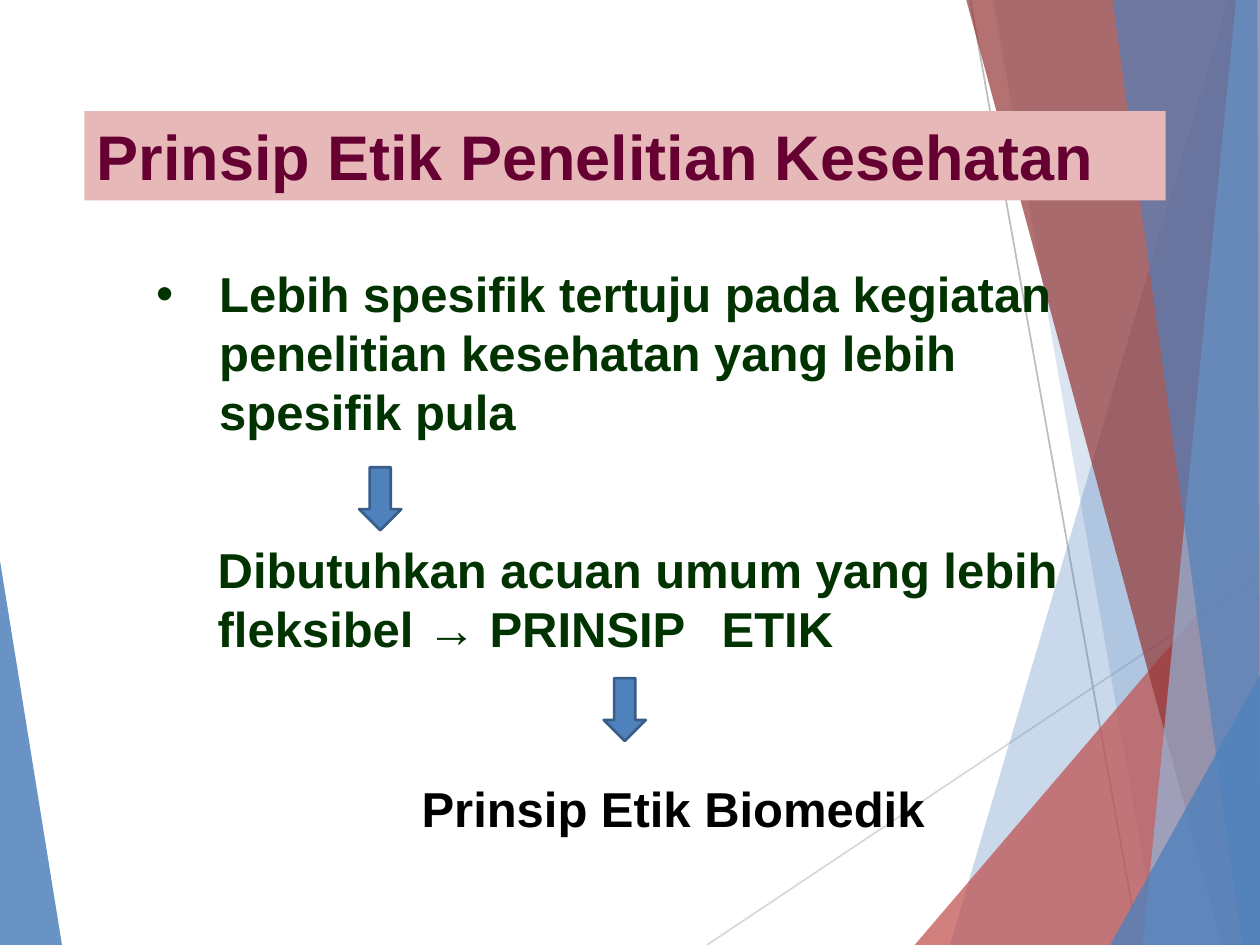
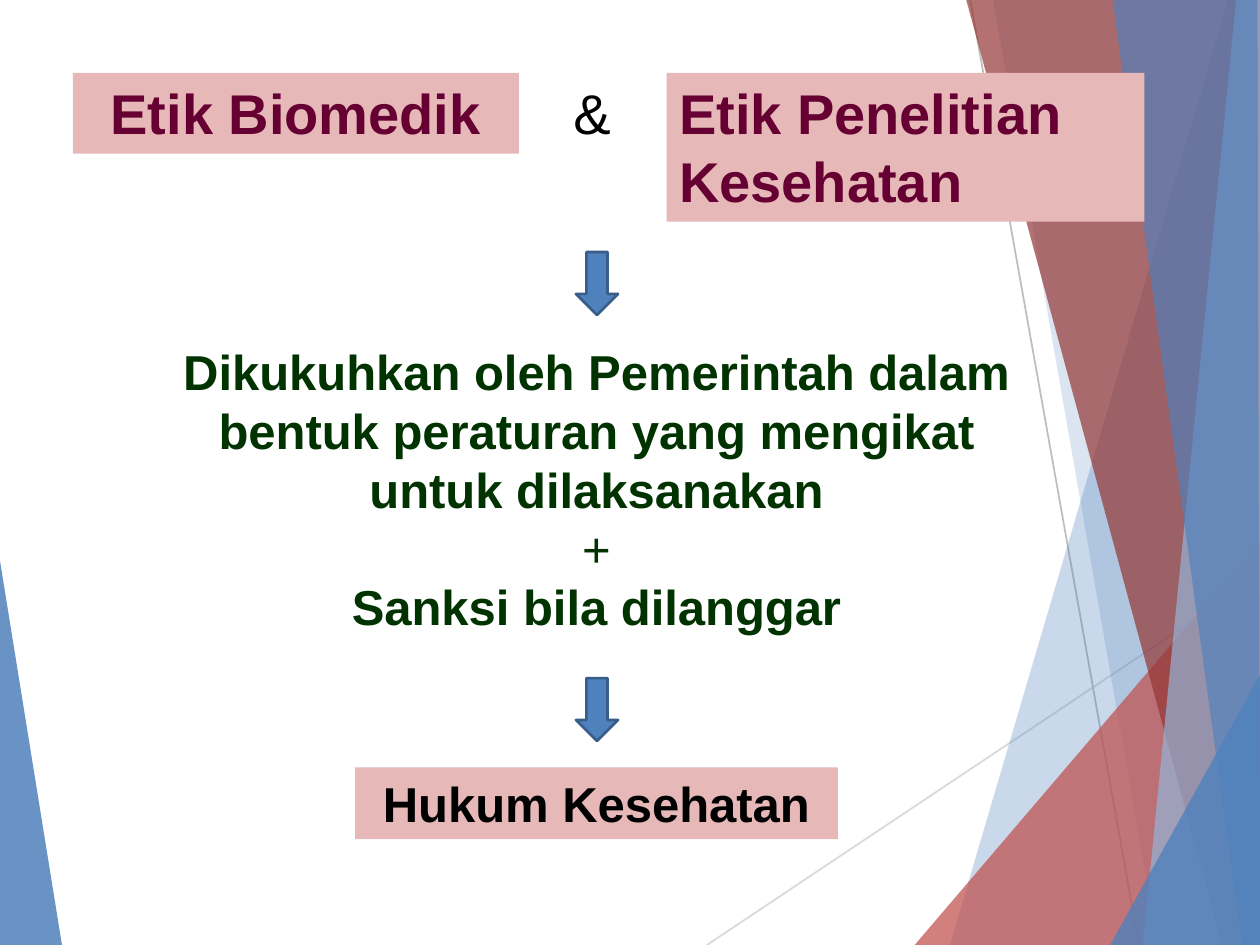
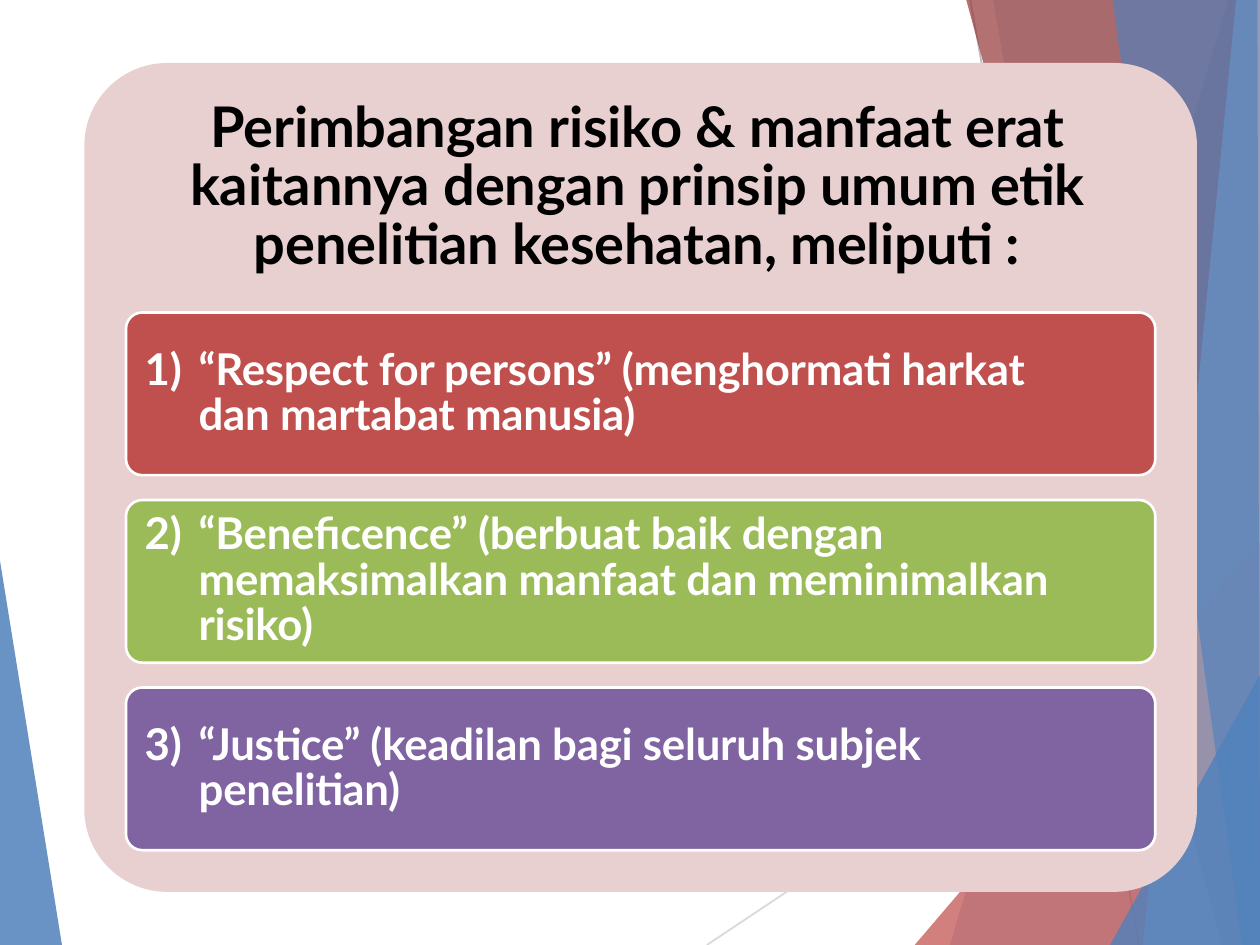
from lxml import etree
from pptx import Presentation
from pptx import util as u
from pptx.dml.color import RGBColor
from pptx.enum import shapes, text
from pptx.oxml import ns

BLUE = RGBColor(0x4F, 0x81, 0xBC)
PALE_BLUE = RGBColor(0x94, 0xB3, 0xD6)
EDGE_BLUE = RGBColor(0x38, 0x5D, 0x89)
RED = RGBColor(0xC0, 0x50, 0x4D)
DARK_RED = RGBColor(0x94, 0x37, 0x35)
GREEN = RGBColor(0x9B, 0xBA, 0x58)
PURPLE = RGBColor(0x80, 0x63, 0xA1)
PINK = RGBColor(0xE6, 0xB8, 0xB8)
PANEL_PINK = RGBColor(0xE8, 0xD0, 0xD0)
MAROON = RGBColor(0x66, 0x00, 0x33)
DARK_GREEN = RGBColor(0x00, 0x33, 0x00)
LIGHT_GREY = RGBColor(0xD9, 0xD9, 0xD9)
MID_GREY = RGBColor(0xBE, 0xBE, 0xBE)
BLACK = RGBColor(0, 0, 0)
WHITE = RGBColor(0xFF, 0xFF, 0xFF)

WIDTH, HEIGHT = 25.4, 19.05
CENTER = text.PP_ALIGN.CENTER

LEFT_WEDGE = [(0, 11.3), (0, HEIGHT), (1.25, HEIGHT)]
THIN_LINES = [
    ((14.25, HEIGHT), (WIDTH, 11.61), LIGHT_GREY),
    ((19.56, 0), (22.96, HEIGHT), MID_GREY),
]
# Outline, colour, opacity in percent
RIGHT_BANDS = [
    ([(24.76, 0), (19.15, HEIGHT), (WIDTH, HEIGHT), (WIDTH, 0)], BLUE, 30),
    ([(WIDTH, 0), (20.02, 0), (23.34, HEIGHT), (WIDTH, HEIGHT)], BLUE, 20),
    ([(WIDTH, 10.9), (18.44, HEIGHT), (WIDTH, HEIGHT)], RED, 72),
    ([(WIDTH, 0), (19.48, 0), (24.64, HEIGHT), (WIDTH, HEIGHT)], DARK_RED, 70),
    ([(WIDTH, 0), (24.92, 0), (23.04, HEIGHT), (WIDTH, HEIGHT)], PALE_BLUE, 70),
    ([(25.35, 0), (22.43, 0), (25.04, HEIGHT), (WIDTH, HEIGHT), (25.35, 0.69)], BLUE, 65),
    ([(WIDTH, 13.61), (22.38, HEIGHT), (WIDTH, HEIGHT)], BLUE, 80),
]


def add_child(parent, tag, **attributes):
    return etree.SubElement(parent, ns.qn(tag), attributes)


class Deck:
    """Holds the presentation, its style and the slide being filled."""

    def __init__(self):
        self.presentation = Presentation()
        self.presentation.slide_width = u.Cm(WIDTH)
        self.presentation.slide_height = u.Cm(HEIGHT)
        self.layout = self.presentation.slide_layouts[6]
        self.new_slide()
        self.move_backdrop_to_layout()

    def new_slide(self):
        self.slide = self.presentation.slides.add_slide(self.layout)

    def move_backdrop_to_layout(self):
        """Draw the bands on the first slide, then hand them to the layout."""
        tree = self.layout.shapes.element
        for placeholder in list(self.layout.placeholders):
            tree.remove(placeholder.element)
        self.polygon(LEFT_WEDGE, BLUE, 85)
        for start, end, color in THIN_LINES:
            self.line(start, end, color)
        for band in RIGHT_BANDS:
            self.polygon(*band)
        for shape in list(self.slide.shapes):
            tree.insert_element_before(shape.element, "p:extLst")

    def polygon(self, points, color, opacity):
        corners = [(u.Cm(x), u.Cm(y)) for x, y in points]
        builder = self.slide.shapes.build_freeform(*corners[0])
        builder.add_line_segments(corners[1:], close=True)
        shape = self.paint(builder.convert_to_shape(), color)
        rgb = shape.element.spPr.find(".//" + ns.qn("a:srgbClr"))
        add_child(rgb, "a:alpha", val=str(opacity * 1000))

    def line(self, start, end, color):
        ends = [u.Cm(value) for value in start + end]
        connector = self.slide.shapes.add_connector(shapes.MSO_CONNECTOR.STRAIGHT, *ends)
        connector.line.color.rgb = color
        connector.line.width = u.Pt(1)
        add_child(connector.element.spPr, "a:effectLst")

    def paint(self, shape, fill, outline=None):
        shape.shadow.inherit = False
        shape.fill.solid()
        shape.fill.fore_color.rgb = fill
        if outline is None:
            shape.line.fill.background()
        else:
            shape.line.color.rgb = outline
            shape.line.width = u.Pt(1.5)
        return shape

    def preset(self, kind, box, fill, outline=None):
        shape = self.slide.shapes.add_shape(kind, *map(u.Cm, box))
        return self.paint(shape, fill, outline)

    def arrow(self, left, top):
        self.preset(shapes.MSO_SHAPE.DOWN_ARROW, (left, top, 0.85, 1.27), BLUE, EDGE_BLUE)

    def rounded(self, box, fill, outline=None):
        shape = self.preset(shapes.MSO_SHAPE.ROUNDED_RECTANGLE, box, fill, outline)
        shape.adjustments[0] = 0.1
        return shape

    def frame(self, shape, left=0, top=0, right=0, anchor=text.MSO_ANCHOR.TOP):
        """Prepare the text frame of a shape with the given insets."""
        frame = shape.text_frame
        frame.word_wrap = True
        frame.vertical_anchor = anchor
        frame.margin_left, frame.margin_top = u.Cm(left), u.Cm(top)
        frame.margin_right, frame.margin_bottom = u.Cm(right), 0
        return frame

    def text_box(self, box, top=0.06, left=0):
        return self.frame(self.slide.shapes.add_textbox(*map(u.Cm, box)), left, top)

    def heading(self, box, wording, size, left=0.25, color=MAROON):
        shape = self.preset(shapes.MSO_SHAPE.RECTANGLE, box, PINK)
        self.paragraph(self.frame(shape, left, 0.12), [(wording, True)], size, color)

    def paragraph(self, frame, runs, size=28, color=DARK_GREEN, font="Arial", leading=None,
                  before=0, align=text.PP_ALIGN.LEFT, tracking=0, margin=0, hanging=0):
        """Add a paragraph of (wording, bold) runs; return its properties element."""
        paragraph = frame.paragraphs[0]
        if paragraph.runs:
            paragraph = frame.add_paragraph()
        paragraph.alignment = align
        paragraph.line_spacing = leading or u.Pt(round(size * 1.2, 1))
        paragraph.space_before = u.Pt(before)
        for wording, bold in runs:
            run = paragraph.add_run()
            run.text = wording
            run.font.name, run.font.size = font, u.Pt(size)
            run.font.bold, run.font.color.rgb = bold, color
            if tracking:
                run._r.get_or_add_rPr().set("spc", str(tracking))
        properties = paragraph._p.get_or_add_pPr()
        properties.set("marL", str(u.Cm(margin)))
        properties.set("indent", str(-u.Cm(hanging)))
        return properties


def research_ethics_slide(deck):
    deck.heading((1.7, 2.24, 21.8, 1.8), "Prinsip Etik Penelitian Kesehatan", 36)
    deck.arrow(7.24, 9.42)
    body = deck.text_box((3.12, 5.26, 18.29, 11.53))
    bullet = deck.paragraph(
        body, [("Lebih spesifik tertuju pada kegiatan penelitian kesehatan yang lebih "
                "spesifik pula", True)], margin=1.3, hanging=1.27)
    add_child(bullet, "a:buFont", typeface="Arial")
    add_child(bullet, "a:buChar", char="•")
    need = deck.paragraph(
        body, [("Dibutuhkan acuan umum yang lebih fleksibel ", True), ("→ ", False),
               ("PRINSIP\tETIK", True)], before=57, margin=1.27)
    tabs = add_child(need, "a:tabLst")
    add_child(tabs, "a:tab", pos=str(u.Cm(11.23)), algn="l")
    deck.paragraph(body, [("Prinsip Etik Biomedik", True)], color=BLACK, before=69, margin=5.38)
    deck.arrow(12.17, 13.67)


def health_law_slide(deck):
    deck.heading((1.47, 1.47, 8.99, 1.63), "Etik Biomedik", 32, left=0.76)
    body = deck.text_box((3.68, 6.83, 16.69, 6))
    for wording, bold in [
        ("Dikukuhkan oleh Pemerintah dalam bentuk peraturan yang mengikat untuk dilaksanakan", True),
        ("+", False),
        ("Sanksi bila dilanggar", True),
    ]:
        deck.paragraph(body, [(wording, bold)], align=CENTER)
    for top in (5.08, 13.67):
        deck.arrow(11.61, top)
    deck.heading((7.16, 15.47, 9.73, 1.45), "Hukum Kesehatan", 28, left=0.56, color=BLACK)
    deck.heading((13.44, 1.47, 9.63, 3), "Etik Penelitian Kesehatan", 32)
    ampersand = deck.text_box((11.56, 1.52, 0.84, 1.42))
    deck.paragraph(ampersand, [("&", False)], 32, BLACK)


def principles_slide(deck):
    deck.rounded((1.7, 1.27, 22.43, 16.71), PANEL_PINK)
    title = deck.text_box((2.84, 1.78, 19.71, 3.78), top=0.25, left=0.3)
    deck.paragraph(
        title, [("Perimbangan risiko & manfaat erat kaitannya dengan prinsip umum etik "
                 "penelitian kesehatan, meliputi :", True)],
        32, BLACK, "Lato", leading=0.87, align=CENTER, tracking=-10)
    principles = [
        ("“Respect for persons” (menghormati harkat dan martabat manusia)", RED),
        ("“Beneficence” (berbuat baik dengan memaksimalkan manfaat dan meminimalkan risiko)", GREEN),
        ("“Justice” (keadilan bagi seluruh subjek penelitian)", PURPLE),
    ]
    for index, (wording, color) in enumerate(principles):
        card = deck.rounded((2.54, 6.3 + index * 3.78, 20.75, 3.28), color, WHITE)
        frame = deck.frame(card, left=0.23, right=1.4, anchor=text.MSO_ANCHOR.MIDDLE)
        item = deck.paragraph(frame, [(wording, True)], 25, WHITE, "Lato", leading=u.Pt(26),
                              tracking=-10, margin=1.14, hanging=1.09)
        add_child(item, "a:buFont", typeface="Lato")
        add_child(item, "a:buAutoNum", type="arabicParenR", startAt=str(index + 1))


def main():
    deck = Deck()
    research_ethics_slide(deck)
    deck.new_slide()
    health_law_slide(deck)
    deck.new_slide()
    principles_slide(deck)
    deck.presentation.save("out.pptx")


if __name__ == "__main__":
    main()
